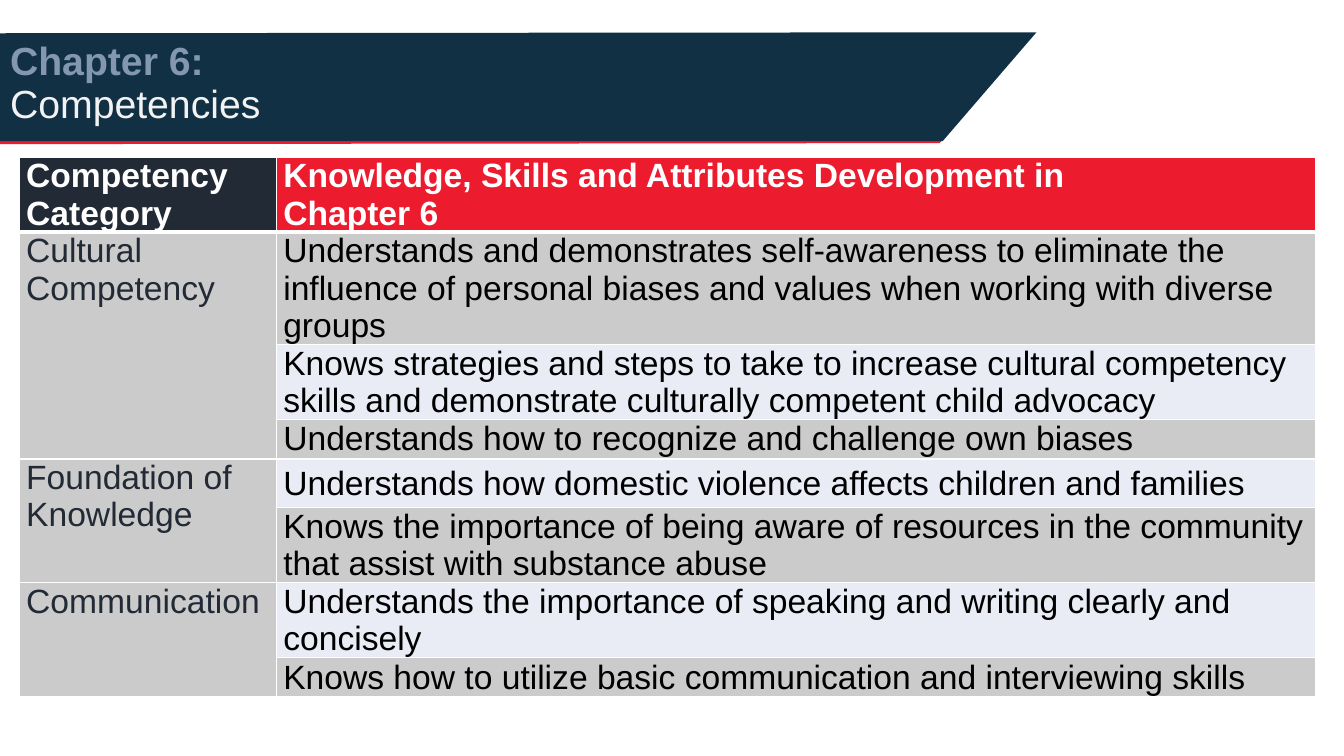
"""Build the Chapter 6 competencies slide: a title band above a merged table."""
import lxml.etree
import pptx
import pptx.dml.color
import pptx.enum.text
import pptx.oxml.ns
import pptx.util

WIDTH, HEIGHT = pptx.util.Inches(13.33), pptx.util.Inches(7.5)
LINE = pptx.util.Inches(0.372)
FONT = "Arial"
NAVY, RED, INK, WHITE = "113044", "ED1B2E", "222A35", "FFFFFF"
GREY, PALE, BLACK = "CBCBCB", "E9EBF5", "000000"
TOP = pptx.enum.text.MSO_ANCHOR.TOP
MIDDLE = pptx.enum.text.MSO_ANCHOR.MIDDLE

HEADINGS = (
    ("Competency Category", INK),
    ("Knowledge, Skills and Attributes Development in\nChapter 6", RED),
)
HEADING_LINES = 2
CATEGORIES = (
    ("Cultural Competency", TOP, (
        ("Understands and demonstrates self-awareness to eliminate the influence "
         "of personal biases and values when working with diverse groups", 3),
        ("Knows strategies and steps to take to increase cultural competency "
         "skills and demonstrate culturally competent child advocacy", 2),
        ("Understands how to recognize and challenge own biases", 1.05))),
    ("Foundation of Knowledge", MIDDLE, (
        ("Understands how domestic violence affects children and families", 1.3),
        ("Knows the importance of being aware of resources in the community "
         "that assist with substance abuse", 2))),
    ("Communication", MIDDLE, (
        ("Understands the importance of speaking and writing clearly and concisely", 2),
        ("Knows how to utilize basic communication and interviewing skills", 1.05))),
)


def paint(target, colour):
    """Give a fill, or the colour of a font, one solid hex colour."""
    if hasattr(target, "solid"):
        target.solid()
        target.fore_color.rgb = pptx.dml.color.RGBColor.from_string(colour)
    else:
        target.color.rgb = pptx.dml.color.RGBColor.from_string(colour)


def add_band(page, corners, colour):
    """Draw a filled outline through corners given in inches."""
    points = [(pptx.util.Inches(x), pptx.util.Inches(y)) for x, y in corners]
    builder = page.shapes.build_freeform(*points[0])
    builder.add_line_segments(points[1:], close=True)
    band = builder.convert_to_shape()
    band.shadow.inherit = False
    band.line.fill.background()
    paint(band.fill, colour)


def set_title(page, parts):
    """Place the title over the band, one line for each (text, colour, bold)."""
    title = page.shapes.title
    page.shapes._spTree.append(title._element)
    title.left, title.top = 0, pptx.util.Inches(0.11)
    title.width, title.height = pptx.util.Inches(11.5), pptx.util.Inches(1.45)
    frame = title.text_frame
    frame.auto_size = pptx.enum.text.MSO_AUTO_SIZE.NONE
    frame.word_wrap = True
    frame.vertical_anchor = MIDDLE
    para = frame.paragraphs[0]
    para.alignment = pptx.enum.text.PP_ALIGN.LEFT
    para.line_spacing = 0.9
    para.font.name, para.font.size = FONT, pptx.util.Pt(28)
    for index, (text, colour, bold) in enumerate(parts):
        if index:
            para.add_line_break()
        span = para.add_run()
        span.text = text
        span.font.name, span.font.size = FONT, pptx.util.Pt(28)
        span.font.bold = bold
        paint(span.font, colour)


def add_borders(cell, top, bottom):
    """Rule a cell in white, with the top and bottom weights in points."""
    properties = cell._tc.get_or_add_tcPr()
    for index, (side, weight) in enumerate(
            (("lnL", 1), ("lnR", 1), ("lnT", top), ("lnB", bottom))):
        line = lxml.etree.Element(pptx.oxml.ns.qn(f"a:{side}"), w=str(pptx.util.Pt(weight)))
        fill = lxml.etree.SubElement(line, pptx.oxml.ns.qn("a:solidFill"))
        lxml.etree.SubElement(fill, pptx.oxml.ns.qn("a:srgbClr"), val=WHITE)
        properties.insert(index, line)


def fill_cell(cell, text, fill, colour, bold=False, anchor=TOP):
    """Write and format the text of one cell."""
    cell.text = text
    cell.vertical_anchor = anchor
    cell.margin_left = cell.margin_right = pptx.util.Inches(0.07)
    cell.margin_top = cell.margin_bottom = 0
    paint(cell.fill, fill)
    for para in cell.text_frame.paragraphs:
        para.font.name, para.font.size = FONT, pptx.util.Pt(24)
        para.font.bold = bold
        paint(para.font, colour)


def add_competency_table(page):
    """Add the table, merging each category down its own rows."""
    lines = [HEADING_LINES] + [size for _, _, skills in CATEGORIES for _, size in skills]
    columns = [pptx.util.Inches(2.55), pptx.util.Inches(10.31)]
    table = page.shapes.add_table(
        len(lines), len(columns), pptx.util.Inches(0.19), pptx.util.Inches(1.56),
        sum(columns), int(sum(lines) * LINE)).table
    for column, width in zip(table.columns, columns):
        column.width = width
    for row, size in zip(table.rows, lines):
        row.height = int(size * LINE)
    for column, (heading, fill) in enumerate(HEADINGS):
        fill_cell(table.cell(0, column), heading, fill, WHITE, bold=True)

    row = 1
    for category, anchor, skills in CATEGORIES:
        first = row
        for skill, _ in skills:
            fill_cell(table.cell(row, 0), "", GREY, INK)
            fill_cell(table.cell(row, 1), skill, GREY if row % 2 else PALE, BLACK, anchor=anchor)
            row += 1
        fill_cell(table.cell(first, 0), category, GREY, INK)
        table.cell(first, 0).merge(table.cell(row - 1, 0))

    for row in range(len(lines)):
        for column in range(len(columns)):
            add_borders(table.cell(row, column), 3 if row == 1 else 1, 3 if row == 0 else 1)


def main():
    """Build and save the deck."""
    deck = pptx.Presentation()
    deck.slide_width, deck.slide_height = WIDTH, HEIGHT
    page = deck.slides.add_slide(deck.slide_layouts[5])
    add_band(page, ((0, 1.38), (9.36, 1.38), (9.32, 1.42), (0, 1.43)), RED)
    add_band(page, ((0, 0.33), (10.28, 0.32), (9.35, 1.4), (0, 1.4)), NAVY)
    add_competency_table(page)
    set_title(page, (("Chapter 6:", "8497B0", True), ("Competencies", "F2F2F2", False)))
    deck.save("out.pptx")


if __name__ == "__main__":
    main()
